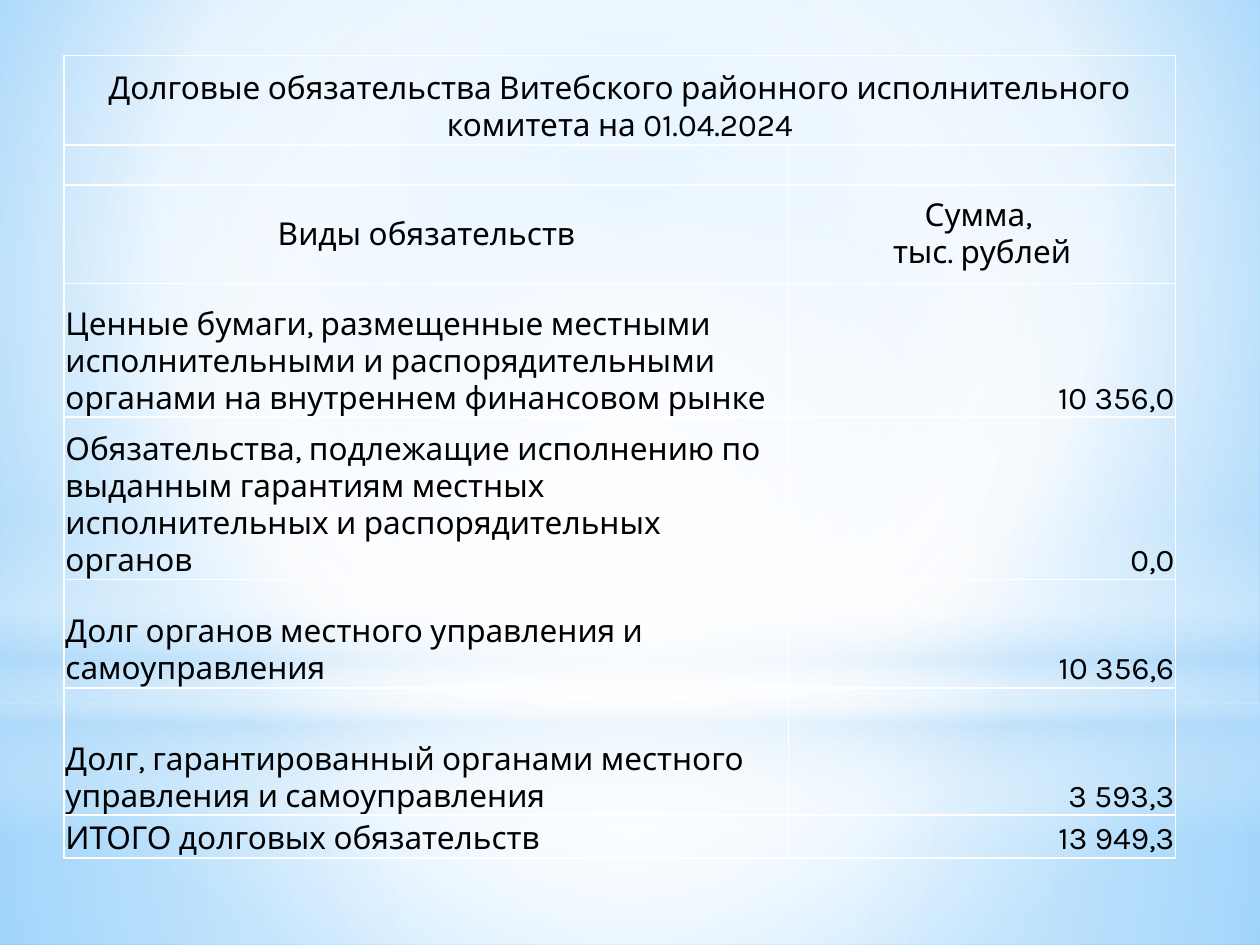
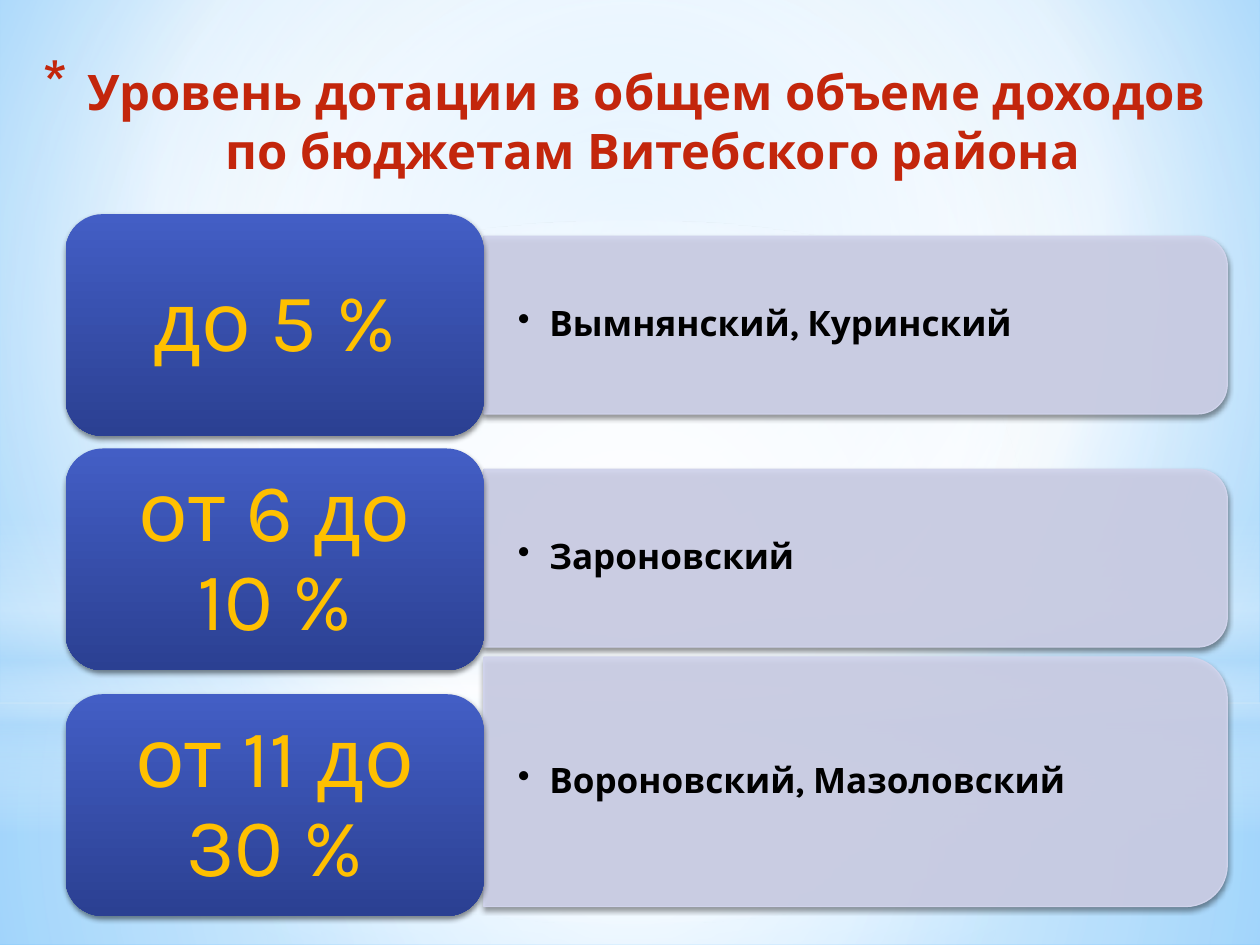
"""Build two slides on the debts and the grant levels of a district budget."""
from pptx import Presentation, util as u
from pptx.dml.color import RGBColor
from pptx.enum import shapes, text
from pptx.oxml import parse_xml
from pptx.oxml.ns import nsdecls, qn

NS = nsdecls("a")
FONT = "Karla"
BLACK, WHITE, RED, GOLD = "000000", "FFFFFF", "C3260C", "FFC000"
SKY, LILAC = "B4DCFA", "D0D3EB"
KIND, ALIGN, ANCHOR = shapes.MSO_SHAPE, text.PP_ALIGN, text.MSO_ANCHOR
COLS, ROWS = 100, 75
UNIT = u.Inches(0.1)


def box(*cells):
    """Turn grid cells into slide lengths."""
    return [round(cell * UNIT) for cell in cells]


def ink(fill, hue, root=None, focus=None):
    """Fill with one hex colour, or with (place, hex, alpha) stops."""
    if isinstance(hue, str):
        fill.solid()
        fill.fore_color.rgb = RGBColor.from_string(hue)
        return
    fill.gradient()
    grad = next(root.iter(qn("a:gradFill")))
    for child in list(grad):
        grad.remove(child)
    stops = "".join(
        f'<a:gs pos="{place * 1000}"><a:srgbClr val="{tint}">'
        f'<a:alpha val="{alpha * 1000}"/></a:srgbClr></a:gs>'
        for place, tint, alpha in hue)
    grad.append(parse_xml(f"<a:gsLst {NS}>{stops}</a:gsLst>"))
    if focus:
        sides = " ".join(f'{side}="{share * 1000}"' for side, share in zip("ltrb", focus))
        grad.append(parse_xml(
            f'<a:path {NS} path="circle"><a:fillToRect {sides}/></a:path>'))
    else:
        grad.append(parse_xml(f'<a:lin {NS} ang="5400000" scaled="0"/>'))


deck = Presentation()
deck.slide_width, deck.slide_height = box(COLS, ROWS)
debts, grants = [deck.slides.add_slide(deck.slide_layouts[6]) for _ in range(2)]

master = deck.slide_master
ink(master.background.fill, [(0, "9ED5FF", 100), (60, WHITE, 100), (100, "5BB9FF", 100)],
    master.element, (20, 10, 20, 60))
MID = (50, 50, 50, 50)
glows = [
    (KIND.RECTANGLE, 55.8, 19.2, MID, [(0, WHITE, 91), (37, WHITE, 76), (100, SKY, 79)]),
    (KIND.RECTANGLE, 0, 55.8, MID, [(0, WHITE, 89), (48, WHITE, 62), (100, SKY, 79)]),
    (KIND.RECTANGLE, 41.2, 25, None,
     [(0, WHITE, 0), (29, WHITE, 30), (45, SKY, 40), (55, WHITE, 26), (65, SKY, 60),
      (100, WHITE, 0)]),
    (KIND.OVAL, 17.5, 55.8, MID, [(0, WHITE, 100), (56, WHITE, 0)]),
]
for num, (kind, top, tall, focus, stops) in enumerate(glows, 20):
    glow = debts.shapes.add_shape(kind, *box(0, top, COLS, tall))
    glow.shadow.inherit = False
    glow.line.fill.background()
    ink(glow.fill, stops, glow.element, focus)
    next(glow.element.iter(qn("p:cNvPr"))).set("id", str(num))
    master.shapes.element.append(glow.element)

words = []
lines = [
    ("Долговые обязательства Витебского районного исполнительного комитета на 01.04.2024", "", 7.1),
    ("", "", 3.2),
    ("Виды обязательств", "Сумма, \vтыс. рублей", 7.8),
    ("Ценные бумаги, размещенные местными исполнительными и распорядительными органами "
     "на внутреннем финансовом рынке", "10 356,0", 10.6),
    ("Обязательства, подлежащие исполнению по выданным гарантиям местных исполнительных "
     "и распорядительных органов", "0,0", 12.9),
    ("Долг органов местного управления и самоуправления", "10 356,6", 8.6),
    ("Долг, гарантированный органами местного управления и самоуправления", "3 593,3", 10.1),
    ("ИТОГО долговых обязательств", "13 949,3", 3.4),
]
HEAD = 2
table = debts.shapes.add_table(len(lines), 2, *box(5.1, 4.4, 88.2, 63.7)).table
table.first_row = table.horz_banding = False
for col, wide in zip(table.columns, box(57.5, 30.7)):
    col.width = wide
for row, (name, total, tall) in enumerate(lines):
    table.rows[row].height = box(tall)[0]
    for col, words_in in enumerate((name, total)):
        cell = table.cell(row, col)
        cell.margin_left = cell.margin_right = cell.margin_top = u.Inches(0.01)
        cell.margin_bottom = 0
        cell.vertical_anchor = ANCHOR.MIDDLE if row == HEAD else ANCHOR.BOTTOM
        side = ALIGN.CENTER if row <= HEAD else (ALIGN.LEFT, ALIGN.RIGHT)[col]
        words.append((cell.text_frame, words_in, 18, BLACK, False, side, None))
        rim = cell._tc.get_or_add_tcPr()
        for edge in "LRTB":
            rim.append(parse_xml(
                f'<a:ln{edge} {NS} w="12700"><a:solidFill><a:srgbClr val="{WHITE}"/>'
                f"</a:solidFill></a:ln{edge}>"))
        cell.fill.background()
table.cell(0, 0).merge(table.cell(0, 1))

title = grants.shapes.add_textbox(*box(2, 4.4, 96.1, 9.4)).text_frame
title.word_wrap = True
words.append((title, "Уровень дотации в общем объеме доходов \vпо бюджетам Витебского района",
              28, RED, True, ALIGN.CENTER, ("*", 0.35, 128)))

LEFT, SPLIT, RIGHT, TALL = 5.2, 38.4, 97.4, 17.6
levels = [
    ("до 5 %", "Вымнянский, Куринский", 17, 25.8, 14.1),
    ("от 6 до 10 %", "Зароновский", 35.6, 44.3, 14.1),
    ("от 11 до 30 %", "Вороновский, Мазоловский", 55.1, 62.05, 19.8),
]
for level, names, top, mid, deep in levels:
    long = RIGHT - SPLIT
    panel = grants.shapes.add_shape(KIND.ROUND_2_SAME_RECTANGLE, *box(
        (SPLIT + RIGHT - deep) / 2, mid - long / 2, deep, long))
    panel.rotation = 90
    ink(panel.fill, LILAC)
    next(panel.element.iter(qn("a:srgbClr"))).append(
        parse_xml(f'<a:alpha {NS} val="90000"/>'))
    ink(panel.line.fill, LILAC)
    panel.line.width = u.Pt(0.75)

    note = grants.shapes.add_textbox(*box(SPLIT, mid - deep / 2 + 0.7, long - 0.7, deep - 1.4))
    label = grants.shapes.add_shape(
        KIND.ROUNDED_RECTANGLE, *box(LEFT, top, SPLIT - LEFT, TALL))
    ink(label.fill, [(0, "435EC5", 100), (100, "2B4092", 100)], label.element)
    label.line.fill.background()
    for shape in (panel, label):
        shape.shadow.inherit = False
        next(shape.element.iter(qn("a:effectLst"))).append(parse_xml(
            f'<a:outerShdw {NS} blurRad="39370" dist="22860" dir="5400000" rotWithShape="0">'
            f'<a:srgbClr val="{BLACK}"><a:alpha val="45000"/></a:srgbClr></a:outerShdw>'))
    for shape, wide, high in ((note, 0.27, 0.14), (label, 0.2, 0.1)):
        frame = shape.text_frame
        frame.word_wrap = True
        frame.vertical_anchor = ANCHOR.MIDDLE
        frame.margin_left = frame.margin_right = u.Inches(wide)
        frame.margin_top = frame.margin_bottom = u.Inches(high)
        frame.paragraphs[0].line_spacing = 0.9
    words += [(note.text_frame, names, 20, BLACK, True, ALIGN.LEFT, ("•", 0.25, 100)),
              (label.text_frame, level, 47, GOLD, False, ALIGN.CENTER, None)]

for frame, line, size, hue, bold, side, mark in words:
    par = frame.paragraphs[0]
    par.text = line
    par.alignment = side
    if mark:
        char, gap, scale = mark
        props = par._p.get_or_add_pPr()
        props.set("marL", str(u.Inches(gap)))
        props.set("indent", str(-u.Inches(gap)))
        for bit in (f'<a:buClr {NS}><a:srgbClr val="{hue}"/></a:buClr>',
                    f'<a:buSzPct {NS} val="{scale * 1000}"/>',
                    f'<a:buChar {NS} char="{char}"/>'):
            props.append(parse_xml(bit))
    par.font.name, par.font.size, par.font.bold = FONT, u.Pt(size), bold
    ink(par.font.fill, hue)

deck.save("out.pptx")
